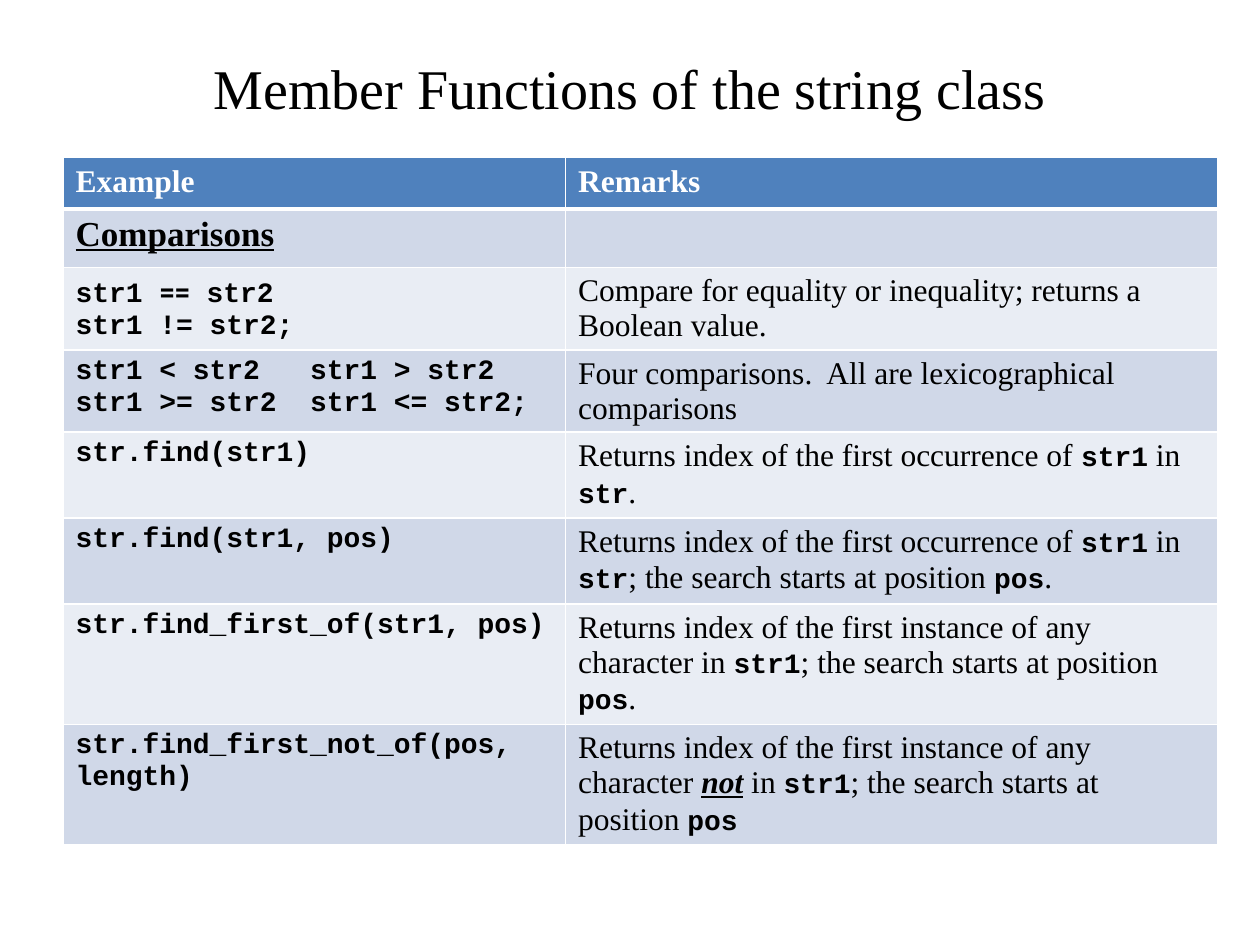
from dataclasses import dataclass

import pptx
import pptx.dml.color
import pptx.enum.text
import pptx.oxml
import pptx.oxml.ns
import pptx.util
from pptx.util import Cm


@dataclass(frozen=True)
class TextStyle:
    font: str
    size: int
    color: str = "000000"
    bold: bool = False
    italic: bool = False
    underline: bool = False


@dataclass(frozen=True)
class Theme:
    title = TextStyle("Times New Roman", 32)
    header = TextStyle("Times New Roman", 18, "FFFFFF", bold=True)
    section = TextStyle("Times New Roman", 20, bold=True, underline=True)
    body = TextStyle("Times New Roman", 18)
    emphasis = TextStyle("Times New Roman", 18, bold=True, italic=True, underline=True)
    code = TextStyle("Courier New", 16, bold=True)
    operator = TextStyle("Roboto Slab", 16, bold=True)
    background = "FFFFFF"
    header_fill = "4F81BD"
    band_fills = ("D0D8E8", "E9EDF4")
    border = "FFFFFF"
    border_width = 1
    header_rule_width = 3


THEME = Theme()


def body(text):
    return text, THEME.body


def code(text):
    return text, THEME.code


FIRST_OCCURRENCE = [body("Returns index of the first occurrence of "), code("str1"),
                    body(" in "), code("str")]
SEARCH_FROM_POS = [body("; the search starts at position "), code("pos")]

# Each row: height in cm, then the paragraphs of both cells, each a list of runs.
ROWS = [
    (1.03, [[("Example", THEME.header)]], [[("Remarks", THEME.header)]]),
    (1.18, [[("Comparisons", THEME.section)]], []),
    (1.66, [[code("str1 "), ("==", THEME.operator), code(" str2")],
            [code("str1 != str2;")]],
     [[body("Compare for equality or inequality; returns a Boolean value.")]]),
    (1.66, [[code("str1 < str2   str1 > str2")], [code("str1 >= str2  str1 <= str2;")]],
     [[body("Four comparisons.  All are lexicographical comparisons")]]),
    (1.73, [[code("str.find(str1)")]], [FIRST_OCCURRENCE + [body(".")]]),
    (1.73, [[code("str.find(str1, pos)")]],
     [FIRST_OCCURRENCE + SEARCH_FROM_POS + [body(".")]]),
    (2.42, [[code("str.find_first_of(str1, pos)")]],
     [[body("Returns index of the first instance of any character in "), code("str1"),
       *SEARCH_FROM_POS, body(".")]]),
    (2.42, [[code("str.find_first_not_of(pos, length)")]],
     [[body("Returns index of the first instance of any character "),
       ("not", THEME.emphasis), body(" in "), code("str1"), *SEARCH_FROM_POS]]),
]


def rgb(color):
    return pptx.dml.color.RGBColor.from_string(color)


def add_run(paragraph, text, style):
    run = paragraph.add_run()
    run.text = text
    font = run.font
    font.name = style.font
    font.size = pptx.util.Pt(style.size)
    font.bold = style.bold
    font.italic = style.italic
    font.underline = style.underline
    font.color.rgb = rgb(style.color)


def write_paragraphs(frame, paragraphs):
    for index, runs in enumerate(paragraphs):
        paragraph = frame.add_paragraph() if index else frame.paragraphs[0]
        for text, style in runs:
            add_run(paragraph, text, style)


def set_borders(cell, widths):
    """Draw the cell's borders; widths maps L, R, T and B, in that order, to points."""
    properties = cell._tc.get_or_add_tcPr()
    for side, width in widths.items():
        properties.append(pptx.oxml.parse_xml(
            f'<a:ln{side} {pptx.oxml.ns.nsdecls("a")} w="{pptx.util.Pt(width)}">'
            f'<a:solidFill><a:srgbClr val="{THEME.border}"/></a:solidFill></a:ln{side}>'))


def place_title(slide, left, top, width, height):
    title = slide.shapes.title
    title.left, title.top, title.width, title.height = left, top, width, height
    frame = title.text_frame
    frame.vertical_anchor = pptx.enum.text.MSO_ANCHOR.MIDDLE
    frame.paragraphs[0].alignment = pptx.enum.text.PP_ALIGN.CENTER
    write_paragraphs(frame, [[("Member Functions of the string class", THEME.title)]])


def place_function_table(slide, left, top, width, example_width):
    height = Cm(sum(row[0] for row in ROWS))
    table = slide.shapes.add_table(len(ROWS), 2, left, top, width, height).table
    table.columns[0].width = example_width
    table.columns[1].width = width - example_width
    for row_index, (row_height, *contents) in enumerate(ROWS):
        table.rows[row_index].height = Cm(row_height)
        fill = THEME.band_fills[(row_index - 1) % 2] if row_index else THEME.header_fill
        widths = dict.fromkeys("LRTB", THEME.border_width)
        if row_index < 2:
            widths["T" if row_index else "B"] = THEME.header_rule_width
        for column, paragraphs in enumerate(contents):
            cell = table.cell(row_index, column)
            set_borders(cell, widths)
            cell.fill.solid()
            cell.fill.fore_color.rgb = rgb(fill)
            write_paragraphs(cell.text_frame, paragraphs)


def main():
    deck = pptx.Presentation()
    deck.slide_width, deck.slide_height = Cm(25.4), Cm(19.05)
    slide = deck.slides.add_slide(deck.slide_layouts.get_by_name("Title Only"))
    slide.background.fill.solid()
    slide.background.fill.fore_color.rgb = rgb(THEME.background)
    place_title(slide, Cm(1.27), Cm(0.76), Cm(22.86), Cm(1.98))
    place_function_table(slide, Cm(1.27), Cm(3.18), Cm(23.28), Cm(10.13))
    deck.save("out.pptx")


if __name__ == "__main__":
    main()
